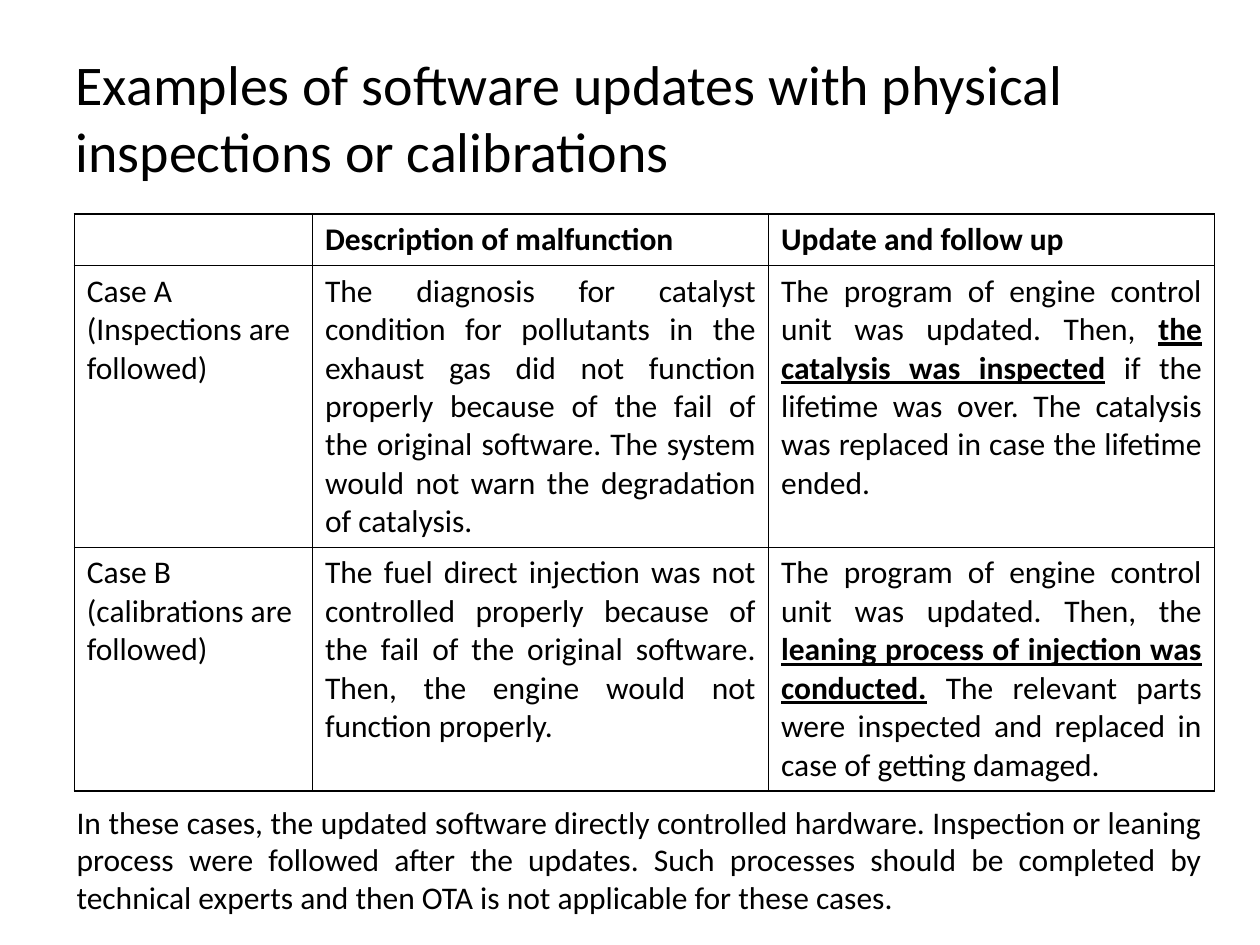
from dataclasses import dataclass

from lxml.etree import SubElement
from pptx import Presentation
from pptx.dml.color import RGBColor
from pptx.enum.text import MSO_ANCHOR as Anchor, MSO_AUTO_SIZE as AutoSize, PP_ALIGN as Align
from pptx.oxml.ns import qn
from pptx.util import Inches, Pt


@dataclass(frozen=True)
class Theme:
    font: str = "Calibri"
    ink: RGBColor = RGBColor(0, 0, 0)
    paper: RGBColor = RGBColor(255, 255, 255)
    title_size: int = 32
    body_size: int = 18
    border: float = 1
    header_rule: float = 0.75


@dataclass(frozen=True)
class Run:
    text: str
    strong: bool = False


@dataclass(frozen=True)
class Case:
    name: str
    kind: str
    malfunction: str
    follow_up: tuple[Run, ...]


THEME = Theme()
HEADERS = ("", "Description of malfunction", "Update and follow up")
CASES = (
    Case(
        "Case A",
        "(Inspections are followed)",
        "The diagnosis for catalyst condition for pollutants in the exhaust gas did not "
        "function properly because of the fail of the original software. The system would "
        "not warn the degradation of catalysis.",
        (
            Run("The program of engine control unit was updated. Then, "),
            Run("the catalysis was inspected", True),
            Run(" if the lifetime was over. The catalysis was replaced in case the lifetime ended."),
        ),
    ),
    Case(
        "Case B",
        "(calibrations are followed)",
        "The fuel direct injection was not controlled properly because of the fail of the "
        "original software. Then, the engine would not function properly.",
        (
            Run("The program of engine control unit was updated. Then, the "),
            Run("leaning process of injection was conducted.", True),
            Run(" The relevant parts were inspected and replaced in case of getting damaged."),
        ),
    ),
)
NOTE = (
    "In these cases, the updated software directly controlled hardware. Inspection or leaning "
    "process were followed after the updates. Such processes should be completed by technical "
    "experts and then OTA is not applicable for these cases."
)
COL_WIDTHS = (1.89, 3.62, 3.54)
ROW_HEIGHTS = (0.41, 1.33, 1.79)


def style(p, size: int = THEME.body_size, bold: bool = False, align: Align = Align.LEFT) -> None:
    p.alignment = align
    p.font.name = THEME.font
    p.font.size = Pt(size)
    p.font.bold = bold
    p.font.color.rgb = THEME.ink


def write(tf, paragraphs: tuple[tuple[Run, ...], ...], bold: bool = False,
          align: Align = Align.LEFT) -> None:
    for i, runs in enumerate(paragraphs):
        p = tf.add_paragraph() if i else tf.paragraphs[0]
        style(p, bold=bold, align=align)
        for run in runs:
            r = p.add_run()
            r.text = run.text
            if run.strong:
                r.font.bold = r.font.underline = True


def set_borders(cell, top: float, bottom: float) -> None:
    props = cell._tc.get_or_add_tcPr()
    widths = {"a:lnL": THEME.border, "a:lnR": THEME.border, "a:lnT": top, "a:lnB": bottom}
    for tag, width in widths.items():
        line = SubElement(props, qn(tag), w=str(Pt(width)))
        fill = SubElement(line, qn("a:solidFill"))
        SubElement(fill, qn("a:srgbClr"), val=str(THEME.ink))


def add_title(s, text: str) -> None:
    sp = s.shapes.title
    sp.left, sp.top, sp.width, sp.height = map(Inches, (0.5, 0.3, 9, 1.25))
    tf = sp.text_frame
    tf.text = text
    tf.auto_size = AutoSize.NONE
    tf.vertical_anchor = Anchor.MIDDLE
    style(tf.paragraphs[0], size=THEME.title_size)


def add_case_table(s, cases: tuple[Case, ...]) -> None:
    frame = s.shapes.add_table(len(cases) + 1, len(HEADERS), Inches(0.59), Inches(1.7),
                               Inches(sum(COL_WIDTHS)), Inches(sum(ROW_HEIGHTS)))
    table = frame.table
    table.first_row = table.horz_banding = False
    for col, width in zip(table.columns, COL_WIDTHS):
        col.width = Inches(width)
    for i, (row, height) in enumerate(zip(table.rows, ROW_HEIGHTS)):
        row.height = Inches(height)
        top = THEME.header_rule if i == 1 else THEME.border
        bottom = THEME.header_rule if i == 0 else THEME.border
        for cell in row.cells:
            set_borders(cell, top, bottom)
            cell.fill.background()
    for j, header in enumerate(HEADERS):
        write(table.cell(0, j).text_frame, ((Run(header),) if header else (),), bold=True)
    for i, case in enumerate(cases, start=1):
        write(table.cell(i, 0).text_frame, ((Run(case.name),), (Run(case.kind),)))
        write(table.cell(i, 1).text_frame, ((Run(case.malfunction),),), align=Align.JUSTIFY)
        write(table.cell(i, 2).text_frame, (case.follow_up,), align=Align.JUSTIFY)
    frame.height = Inches(4.51)


def add_note(s, text: str) -> None:
    sp = s.shapes.add_textbox(*map(Inches, (0.51, 6.32, 9.13, 1.01)))
    tf = sp.text_frame
    tf.word_wrap = True
    tf.auto_size = AutoSize.SHAPE_TO_FIT_TEXT
    write(tf, ((Run(text),),), align=Align.JUSTIFY)


def main() -> None:
    prs = Presentation()
    prs.slide_width, prs.slide_height = Inches(10), Inches(7.5)
    s = prs.slides.add_slide(prs.slide_layouts[5])
    s.background.fill.solid()
    s.background.fill.fore_color.rgb = THEME.paper
    add_title(s, "Examples of software updates with physical inspections or calibrations")
    add_case_table(s, CASES)
    add_note(s, NOTE)
    prs.save("out.pptx")


if __name__ == "__main__":
    main()
